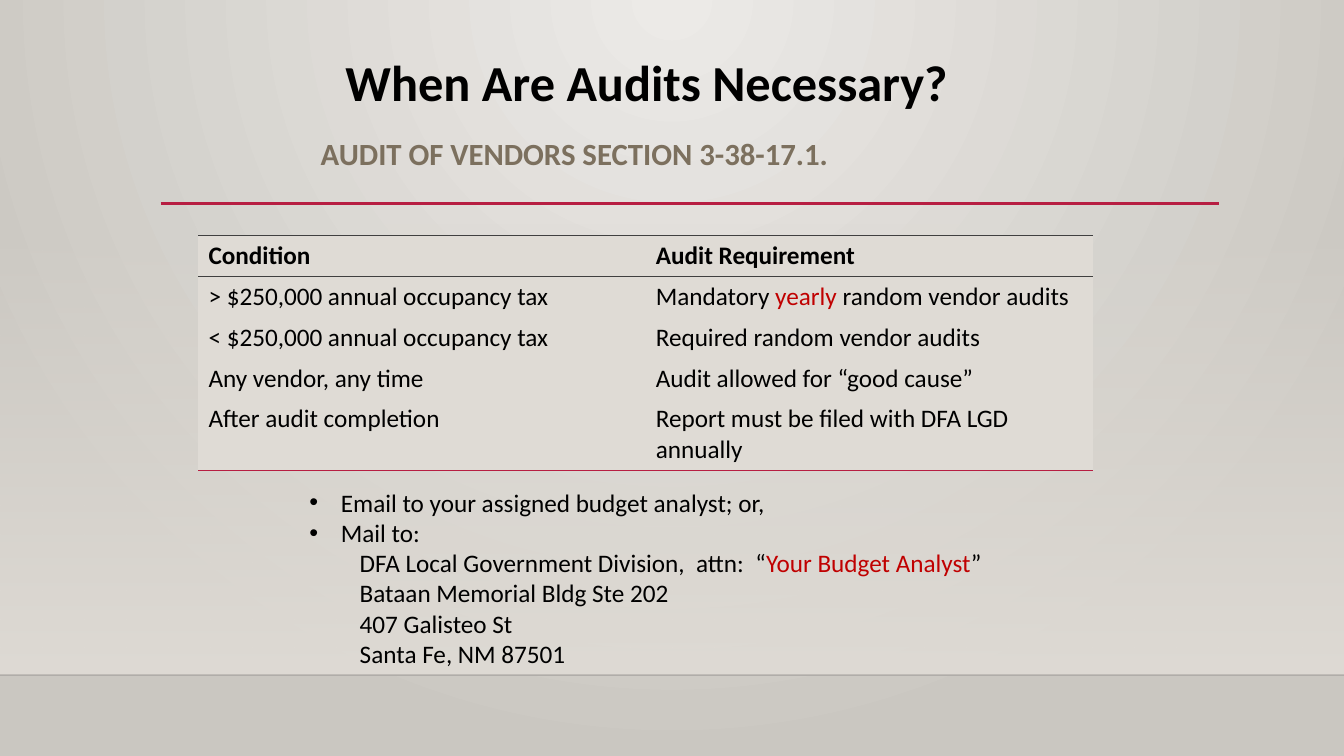
from dataclasses import dataclass
from typing import NamedTuple

from pptx import Presentation
from pptx.dml.color import RGBColor
from pptx.enum.shapes import MSO_CONNECTOR as Connector, MSO_SHAPE as Preset
from pptx.enum.text import MSO_ANCHOR as Anchor, MSO_AUTO_SIZE as AutoSize, PP_ALIGN as Align
from pptx.oxml import parse_xml
from pptx.oxml.ns import nsdecls, qn
from pptx.oxml.xmlchemy import OxmlElement
from pptx.util import Emu, Pt

NO_GRID_STYLE = "{2D5ABB26-0587-4C30-8999-92F81FD0307C}"


@dataclass(frozen=True)
class Theme:
    font: str = "Calibri"
    title_size: int = 36
    subtitle_size: int = 22
    body_size: int = 18
    ink: str = "000000"
    subtitle: str = "7C705E"
    highlight: str = "C00000"
    accent: str = "B71E42"
    header_rule: str = "404040"
    panel: str = "DFDBD5"
    glow: str = "ECEAE7"
    edge: str = "CAC7C1"
    horizon: str = "000001"


THEME = Theme()


class Box(NamedTuple):
    left: int
    top: int
    width: int
    height: int


class Piece(NamedTuple):
    text: str
    color: str = THEME.ink


class Rule(NamedTuple):
    left: int
    right: int
    y: int
    color: str
    points: float
    opacity: int = 100


class ListLine(NamedTuple):
    pieces: list[Piece]
    bullet: bool = False


SLIDE_WIDTH, SLIDE_HEIGHT = 1280, 720
HORIZON_Y = 643
FLOOR_BOX = Box(0, 212, SLIDE_WIDTH, HORIZON_Y - 212)
TITLE_BOX = Box(168, 50, 896, 62)
SUBTITLE_BOX = Box(296, 128, 640, 48)
TABLE_BOX = Box(189, 224, 852, 223)
LIST_BOX = Box(237, 459, 853, 183)
ROW_HEIGHT, LAST_ROW_HEIGHT = 39, 67
BULLET_INDENT, BULLET_HANG, ADDRESS_INDENT = 78, 30, 96

RULES = [
    Rule(0, SLIDE_WIDTH, HORIZON_Y, THEME.horizon, 1, 20),
    Rule(153, 1161, 194, THEME.accent, 2.5),
]
AUDIT_ROWS = [
    ([Piece("Condition")], [Piece("Audit Requirement")]),
    (
        [Piece("> $250,000 annual occupancy tax")],
        [Piece("Mandatory "), Piece("yearly", THEME.highlight), Piece(" random vendor audits")],
    ),
    ([Piece("< $250,000 annual occupancy tax")], [Piece("Required random vendor audits")]),
    ([Piece("Any vendor, any time")], [Piece("Audit allowed for “good cause”")]),
    ([Piece("After audit completion")], [Piece("Report must be filed with DFA LGD annually")]),
]
FILING_LINES = [
    ListLine([Piece("Email to your assigned budget analyst; or,")], bullet=True),
    ListLine([Piece("Mail to:")], bullet=True),
    ListLine([
        Piece("DFA Local Government Division,  attn:  “"),
        Piece("Your Budget Analyst", THEME.highlight),
        Piece("”"),
    ]),
    ListLine([Piece("Bataan Memorial Bldg Ste 202")]),
    ListLine([Piece("407 Galisteo St")]),
    ListLine([Piece("Santa Fe, NM 87501")]),
]


def px(length: int) -> Emu:
    return Emu(length * 9525)


def rgb(color: str) -> RGBColor:
    return RGBColor.from_string(color)


def place(shape, box: Box) -> None:
    shape.left, shape.top, shape.width, shape.height = map(px, box)


def add_runs(paragraph, pieces: list[Piece], size: int, bold: bool = False) -> None:
    for piece in pieces:
        run = paragraph.add_run()
        run.text = piece.text
        font = run.font
        font.name, font.size, font.bold = THEME.font, Pt(size), bold
        font.color.rgb = rgb(piece.color)


def set_opacity(color_element, percent: int) -> None:
    alpha = OxmlElement("a:alpha")
    alpha.set("val", str(percent * 1000))
    color_element.append(alpha)


def set_gradient(fill, colors: tuple[str, str]) -> None:
    fill.gradient()
    for stop, color in zip(fill.gradient_stops, colors):
        stop.color.rgb = rgb(color)


def paint_background(slide) -> None:
    set_gradient(slide.background.fill, (THEME.glow, THEME.edge))
    linear = next(slide.element.iter(qn("a:lin")))
    linear.getparent().replace(linear, parse_xml(
        f'<a:path {nsdecls("a")} path="circle">'
        '<a:fillToRect l="43000" t="0" r="43000" b="100000"/></a:path>'
    ))


def add_floor(slide):
    floor = slide.shapes.add_shape(Preset.RECTANGLE, *map(px, FLOOR_BOX))
    floor.shadow.inherit = False
    floor.line.fill.background()
    set_gradient(floor.fill, (THEME.panel, THEME.panel))
    floor.fill.gradient_angle = 270
    set_opacity(next(floor.element.iter(qn("a:srgbClr"))), 0)
    return floor


def add_rule(slide, rule: Rule):
    line = slide.shapes.add_connector(
        Connector.STRAIGHT, px(rule.left), px(rule.y), px(rule.right), px(rule.y)
    )
    line.line.color.rgb = rgb(rule.color)
    line.line.width = Pt(rule.points)
    if rule.opacity < 100:
        set_opacity(next(line.element.iter(qn("a:srgbClr"))), rule.opacity)
    line.element.spPr.append(OxmlElement("a:effectLst"))
    return line


def fill_heading(shape, box: Box, piece: Piece, size: int, align: Align) -> None:
    place(shape, box)
    frame = shape.text_frame
    frame.word_wrap, frame.auto_size = True, AutoSize.NONE
    frame.vertical_anchor = Anchor.TOP
    paragraph = frame.paragraphs[0]
    paragraph.alignment, paragraph.line_spacing = align, 0.9
    add_runs(paragraph, [piece], size, bold=True)


def set_borders(cell, borders: dict[str, str]) -> None:
    for position, (side, color) in enumerate(borders.items()):
        cell._tc.get_or_add_tcPr().insert(position, parse_xml(
            f'<a:{side} {nsdecls("a")} w="12700"><a:solidFill>'
            f'<a:srgbClr val="{color}"/></a:solidFill></a:{side}>'
        ))


def add_audit_table(slide) -> None:
    frame = slide.shapes.add_table(len(AUDIT_ROWS), 2, *map(px, TABLE_BOX))
    table = frame.table
    table.horz_banding = False
    next(frame.element.iter(qn("a:tableStyleId"))).text = NO_GRID_STYLE
    last = len(AUDIT_ROWS) - 1
    borders = {
        0: {"lnT": THEME.header_rule, "lnB": THEME.header_rule},
        last: {"lnB": THEME.accent},
    }
    for index, row in enumerate(AUDIT_ROWS):
        table.rows[index].height = px(LAST_ROW_HEIGHT if index == last else ROW_HEIGHT)
        for column, pieces in enumerate(row):
            cell = table.cell(index, column)
            cell.fill.solid()
            cell.fill.fore_color.rgb = rgb(THEME.panel)
            set_borders(cell, borders.get(index, {}))
            add_runs(cell.text_frame.paragraphs[0], pieces, THEME.body_size, bold=index == 0)


def set_indent(paragraph, bullet: bool) -> None:
    properties = paragraph._p.get_or_add_pPr()
    properties.set("marL", str(px(BULLET_INDENT if bullet else ADDRESS_INDENT)))
    properties.set("indent", str(px(-BULLET_HANG if bullet else 0)))
    marker = OxmlElement("a:buChar" if bullet else "a:buNone")
    if bullet:
        marker.set("char", "•")
    properties.append(marker)


def fill_filing_list(body) -> None:
    place(body, LIST_BOX)
    frame = body.text_frame
    frame.word_wrap, frame.auto_size = True, AutoSize.NONE
    for index, line in enumerate(FILING_LINES):
        paragraph = frame.add_paragraph() if index else frame.paragraphs[0]
        set_indent(paragraph, line.bullet)
        paragraph.space_before = Pt(0)
        add_runs(paragraph, line.pieces, THEME.body_size)


def main() -> None:
    presentation = Presentation()
    presentation.slide_width, presentation.slide_height = px(SLIDE_WIDTH), px(SLIDE_HEIGHT)
    slide = presentation.slides.add_slide(presentation.slide_layouts[1])
    title, body = slide.placeholders
    paint_background(slide)
    for backdrop in [add_floor(slide), *(add_rule(slide, rule) for rule in RULES)]:
        title.element.addprevious(backdrop.element)
    fill_heading(title, TITLE_BOX, Piece("When Are Audits Necessary?"),
                 THEME.title_size, Align.CENTER)
    subtitle = slide.shapes.add_textbox(*map(px, SUBTITLE_BOX))
    fill_heading(subtitle, SUBTITLE_BOX,
                 Piece("AUDIT OF VENDORS SECTION 3-38-17.1.", THEME.subtitle),
                 THEME.subtitle_size, Align.LEFT)
    fill_filing_list(body)
    add_audit_table(slide)
    presentation.save("out.pptx")


if __name__ == "__main__":
    main()
